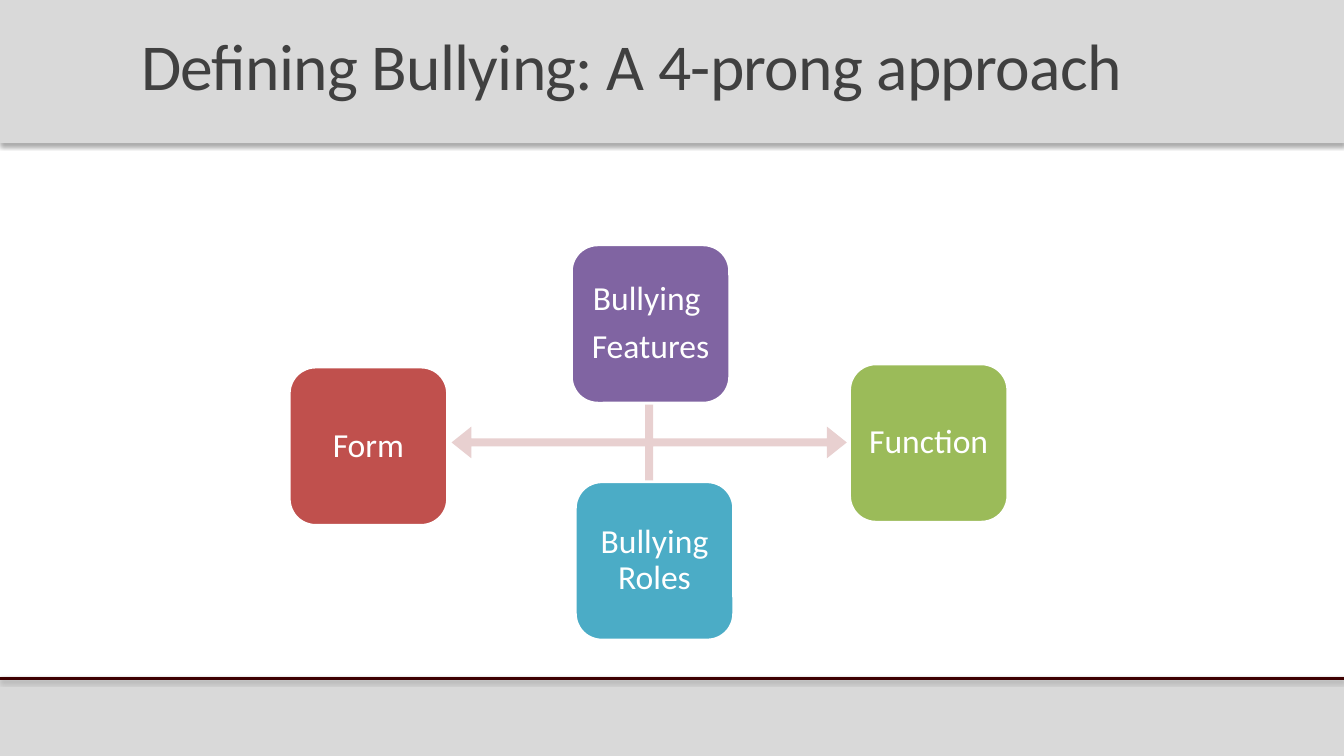
"""Build the slide on the four prongs of bullying."""
from lxml.etree import SubElement
from pptx import Presentation
from pptx.dml.color import RGBColor
from pptx.enum.shapes import MSO_CONNECTOR, MSO_SHAPE
from pptx.enum.text import MSO_ANCHOR, MSO_AUTO_SIZE, PP_ALIGN
from pptx.oxml.ns import qn
from pptx.util import Cm, Pt

TITLE = "Defining Bullying: A 4-prong approach"
WIDE, HIGH = 33.87, 19.05
HEAD, FOOT = 3.61, 17.09
SIDE = 3.99
CROSS = (11.38, 6.17, 9.96, 9.96)
PRONGS = [
    ("Form", 7.29, 9.25, "C0504D"),
    ("Function", 21.41, 9.17, "9BBB59"),
    ("Bullying \nFeatures", 14.4, 6.17, "8064A2"),
    ("Bullying Roles", 14.5, 12.14, "4BACC6"),
]


def color(code):
    return RGBColor.from_string(code)


def add_shape(kind, box, fill, edge=None):
    shape = slide.shapes.add_shape(kind, *map(Cm, box))
    shape.shadow.inherit = False
    shape.fill.solid()
    shape.fill.fore_color.rgb = color(fill)
    if edge:
        shape.line.color.rgb = color(edge)
        shape.line.width = Pt(2)
    else:
        shape.line.fill.background()
    return shape


def add_shadow(props, dist, alpha):
    effects = props.find(qn("a:effectLst"))
    if effects is None:
        effects = SubElement(props, qn("a:effectLst"))
    shadow = SubElement(effects, qn("a:outerShdw"), blurRad=str(Pt(3.1)),
                        dist=str(Pt(dist)), dir="5400000", rotWithShape="0")
    black = SubElement(shadow, qn("a:srgbClr"), val="000000")
    SubElement(black, qn("a:alpha"), val=str(alpha * 1000))


def style(par, size, code, space):
    par.line_spacing = space
    for run in par.runs:
        run.font.name = "Calibri"
        run.font.size = Pt(size)
        run.font.color.rgb = color(code)


def add_bar(top, height):
    bar = add_shape(MSO_SHAPE.RECTANGLE, (0, top, WIDE, height), "D9D9D9")
    add_shadow(bar._element.spPr, 1.8, 35)


def add_rule():
    rule = slide.shapes.add_connector(
        MSO_CONNECTOR.STRAIGHT, 0, Cm(FOOT), Cm(WIDE), Cm(FOOT))
    rule.line.color.rgb = color("3E0001")
    rule.line.width = Pt(2)
    add_shadow(rule._element.spPr, 1.6, 38)


def add_cross():
    cross = add_shape(MSO_SHAPE.QUAD_ARROW, CROSS, "E8D0D0")
    for i, part in enumerate((0.02, 0.04, 0.05)):
        cross.adjustments[i] = part


def add_prong(text, left, top, fill):
    prong = add_shape(MSO_SHAPE.ROUNDED_RECTANGLE, (left, top, SIDE, SIDE),
                      fill, "FFFFFF")
    frame = prong.text_frame
    frame.text = text
    frame.word_wrap = True
    frame.vertical_anchor = MSO_ANCHOR.MIDDLE
    frame.margin_left = frame.margin_right = Cm(0.25)
    frame.margin_top = frame.margin_bottom = Cm(0.25)
    for par in frame.paragraphs:
        par.alignment = PP_ALIGN.CENTER
        par.space_after = Pt(8.4)
        style(par, 24, "FFFFFF", 0.9)


def set_title():
    title = slide.shapes.title
    title.left, title.top = Cm(3.3), Cm(0.64)
    title.width, title.height = Cm(27.94), Cm(2.11)
    frame = title.text_frame
    frame.text = TITLE
    frame.word_wrap = True
    frame.auto_size = MSO_AUTO_SIZE.NONE
    frame.vertical_anchor = MSO_ANCHOR.BOTTOM
    par = frame.paragraphs[0]
    par.alignment = PP_ALIGN.LEFT
    style(par, 46.8, "404040", 0.85)
    par.runs[0].font._element.set("spc", "-50")
    slide.shapes._spTree.append(title._element)


deck = Presentation()
deck.slide_width, deck.slide_height = Cm(WIDE), Cm(HIGH)
slide = deck.slides.add_slide(deck.slide_layouts[5])
add_bar(FOOT, HIGH - FOOT)
add_rule()
add_bar(0, HEAD)
add_cross()
for prong in PRONGS:
    add_prong(*prong)
set_title()
deck.save("out.pptx")
